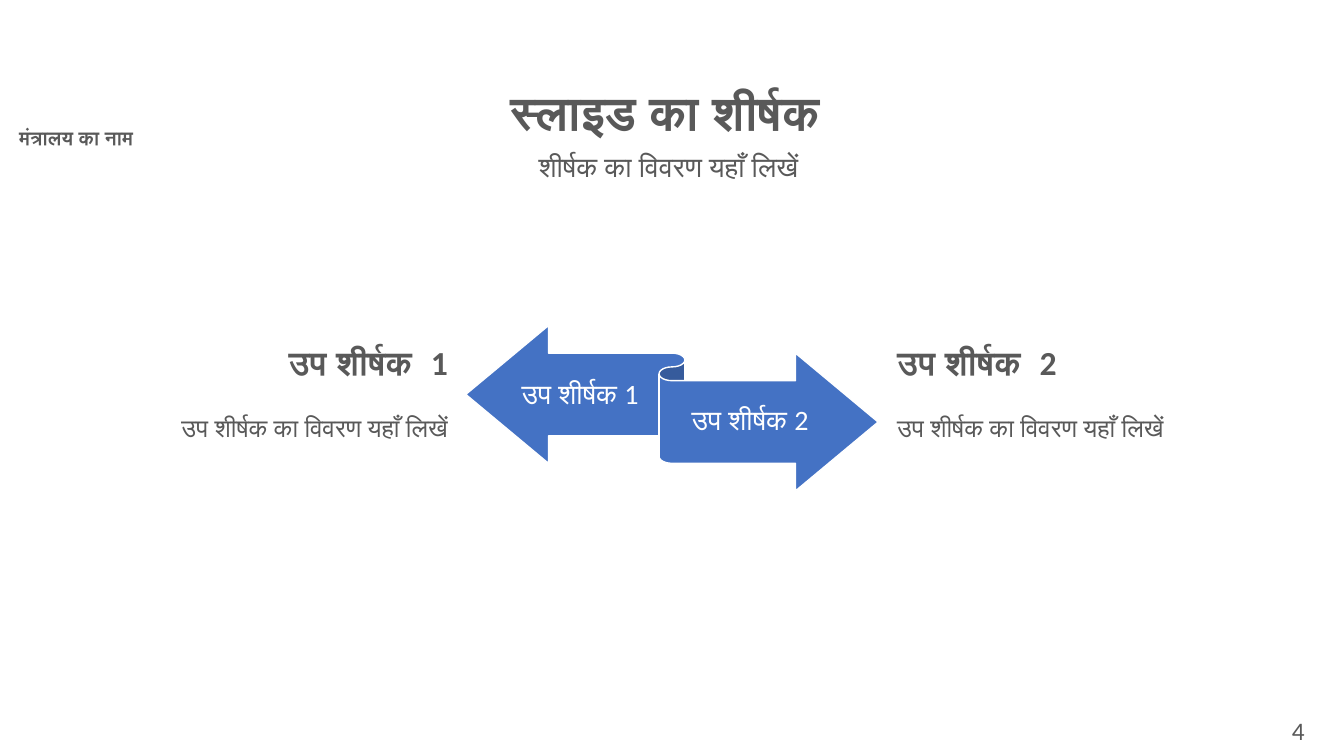
"""Build a slide with a two-way ribbon and a subtitle on each side."""
from pptx import Presentation, util as u
from pptx.dml.color import RGBColor
from pptx.enum import shapes, text

HUES = {"grey": "595959", "blue": "4472C4", "white": "FFFFFF"}
WIDE, HIGH = 13.33, 7.5
MID, LEFT, RIGHT = text.PP_ALIGN.CENTER, text.PP_ALIGN.LEFT, text.PP_ALIGN.RIGHT
NOTE = "उप शीर्षक का विवरण यहाँ लिखें"

# Boxes are left, top, width, height in percent of the slide.
HEADS = [
    ("मंत्रालय का नाम", (0, 16.4, 11.33, 4.67), dict(size=14, bold=True, font="Roboto")),
    ("स्लाइड का शीर्षक ", (13.95, 11.2, 72.1, 7.33), dict(size=34, bold=True)),
    ("शीर्षक का विवरण यहाँ लिखें ", (13.95, 19.6, 72.1, 8.4), dict(size=20)),
]
RIBBON = (34.66, 43.07, 30.68, 21.87)
LABELS = [
    ("उप शीर्षक 1 ", (38.33, 46.93, 10.13, 10.67)),
    ("उप शीर्षक 2 ", (50.04, 50.4, 12, 10.67)),
]
SIDES = [
    ("उप शीर्षक  1", (12.23, 44.53, 21.83, 18.8), RIGHT),
    ("उप शीर्षक  2", (66.02, 44.53, 23.86, 18.8), LEFT),
]
PAGE = ("4", (93.17, 94, 6.83, 6))


def place(box):
    sides = (WIDE, HIGH, WIDE, HIGH)
    return [u.Inches(part * side / 100) for part, side in zip(box, sides)]


def write(words, box=None, frame=None, size=18, bold=False, font="Calibri",
          hue="grey", align=MID, line=1.0, gap=0, inset=0.1, anchor=text.MSO_ANCHOR.TOP):
    if frame is None:
        frame = slide.shapes.add_textbox(*place(box)).text_frame
        frame.word_wrap = True
        frame.margin_left = frame.margin_right = u.Inches(inset)
        frame.vertical_anchor = anchor
        para = frame.paragraphs[0]
    else:
        para = frame.add_paragraph()
        para.space_before = u.Pt(gap)
    para.alignment, para.line_spacing = align, line
    run = para.add_run()
    run.text = words
    run.font.name, run.font.size, run.font.bold = font, u.Pt(size), bold
    run.font.color.rgb = RGBColor.from_string(HUES[hue])
    return frame


deck = Presentation()
deck.slide_width, deck.slide_height = u.Inches(WIDE), u.Inches(HIGH)
slide = deck.slides.add_slide(deck.slide_layouts[6])

for words, box, form in HEADS:
    write(words, box, line=0.9, **form)

ribbon = slide.shapes.add_shape(shapes.MSO_SHAPE.LEFT_RIGHT_RIBBON, *place(RIBBON))
ribbon.shadow.inherit = False
ribbon.fill.solid()
ribbon.fill.fore_color.rgb = RGBColor.from_string(HUES["blue"])
ribbon.line.color.rgb = RGBColor.from_string(HUES["white"])
ribbon.line.width = u.Pt(1)

for words, box in LABELS:
    write(words, box, size=20, hue="white", line=0.9, inset=0,
          anchor=text.MSO_ANCHOR.MIDDLE)

for words, box, align in SIDES:
    frame = write(words, box, size=24, bold=True, align=align)
    write(NOTE, frame=frame, align=align, gap=22)

write(*PAGE)
deck.save("out.pptx")
